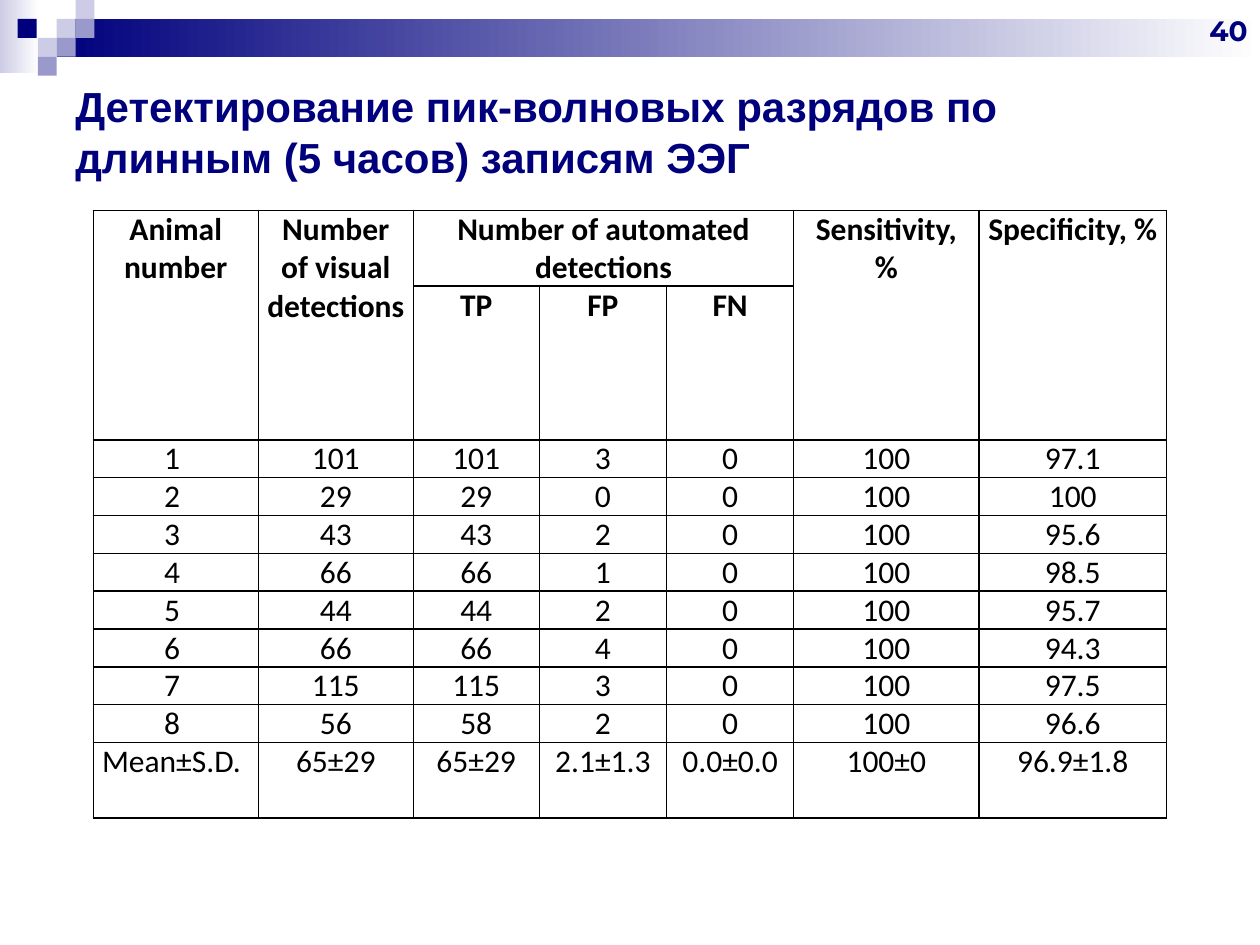
import pptx
import pptx.util
import pptx.dml.color
import pptx.enum.shapes
import pptx.enum.text
import pptx.oxml
import pptx.oxml.ns
from pptx.util import Inches

NAVY = pptx.dml.color.RGBColor(0x00, 0x00, 0x7D)
LAVENDER = pptx.dml.color.RGBColor(0xCC, 0xCC, 0xE6)
VIOLET = pptx.dml.color.RGBColor(0x99, 0x99, 0xCC)
WHITE = pptx.dml.color.RGBColor(0xFF, 0xFF, 0xFF)
BLACK = pptx.dml.color.RGBColor(0x00, 0x00, 0x00)
ALIGN = pptx.enum.text.PP_ALIGN
ANCHOR = pptx.enum.text.MSO_ANCHOR


def write_text(frame, text, size=18, font="Calibri", color=BLACK, bold=False, align=ALIGN.LEFT):
    frame.word_wrap = True
    paragraph = frame.paragraphs[0]
    paragraph.alignment = align
    run = paragraph.add_run()
    run.text = text
    run.font.size = pptx.util.Pt(size)
    run.font.name = font
    run.font.bold = bold
    run.font.color.rgb = color


def add_block(left, top, width, height, color, fade=False):
    shape = slide.shapes.add_shape(
        pptx.enum.shapes.MSO_SHAPE.RECTANGLE,
        Inches(left), Inches(top), Inches(width), Inches(height))
    shape.shadow.inherit = False
    shape.line.fill.background()
    if fade:
        shape.fill.gradient()
        shape.fill.gradient_angle = 0
        for stop, stop_color in zip(shape.fill.gradient_stops, (color, WHITE)):
            stop.color.rgb = stop_color
    else:
        shape.fill.solid()
        shape.fill.fore_color.rgb = color


presentation = pptx.Presentation()
presentation.slide_width = Inches(10)
presentation.slide_height = Inches(7.5)
slide = presentation.slides.add_slide(presentation.slide_layouts[6])

# Header band and mosaic of small squares
add_block(0, 0, 0.31, 0.58, LAVENDER, fade=True)
add_block(0.45, 0.15, 9.55, 0.3, NAVY, fade=True)
SQUARE = 0.15
for left, top, color in [
    (0.45, 0.15, LAVENDER), (0.6, 0, LAVENDER), (0.6, 0.15, VIOLET), (0.3, 0.3, LAVENDER),
    (0.14, 0.15, NAVY), (0.45, 0.3, VIOLET), (0.3, 0.45, VIOLET),
]:
    add_block(left, top, SQUARE, SQUARE, color)

# Title
title = slide.shapes.add_textbox(Inches(0.5), Inches(0.5), Inches(9), Inches(1.08))
title.text_frame.vertical_anchor = ANCHOR.MIDDLE
write_text(title.text_frame, "Детектирование пик-волновых разрядов по длинным (5 часов) записям ЭЭГ",
           size=24, font="Arial", color=NAVY, bold=True)

# Slide number
number = slide.shapes.add_textbox(Inches(8.5), Inches(0), Inches(1.5), Inches(0.42))
number.text_frame.vertical_anchor = ANCHOR.BOTTOM
write_text(number.text_frame, "40", size=16, font="Montserrat", color=NAVY, bold=True,
           align=ALIGN.RIGHT)

# Detection results: two header rows, eight animals, summary
HEADER_ROWS = 2
rows = [
    ["Animal number", "Number of visual detections", "Number of automated detections",
     "", "", "Sensitivity, %", "Specificity, %"],
    ["", "", "TP", "FP", "FN", "", ""],
    ["1 ", "101", "101", "3", "0", "100", "97.1"],
    ["2 ", "29", "29", "0", "0", "100", "100"],
    ["3 ", "43", "43", "2", "0", "100", "95.6"],
    ["4 ", "66", "66", "1", "0", "100", "98.5"],
    ["5 ", "44", "44", "2", "0", "100", "95.7"],
    ["6 ", "66", "66", "4", "0", "100", "94.3"],
    ["7 ", "115", "115", "3", "0", "100", "97.5"],
    ["8 ", "56", "58", "2", "0", "100", "96.6"],
    ["Mean±S.D.", "65±29", "65±29", "2.1±1.3", "0.0±0.0", "100±0", "96.9±1.8"],
]
column_widths = [1.31, 1.23, 1, 1.01, 1.01, 1.47, 1.49]
row_heights = [0.6, 1.22] + [0.3] * 8 + [0.6]

table = slide.shapes.add_table(
    len(rows), len(column_widths), Inches(0.74), Inches(1.67),
    Inches(sum(column_widths)), Inches(sum(row_heights))).table
table.first_row = False
table.horz_banding = False
for column, width in zip(table.columns, column_widths):
    column.width = Inches(width)
for row, height in zip(table.rows, row_heights):
    row.height = Inches(height)

for row_index, values in enumerate(rows):
    for column_index, value in enumerate(values):
        cell = table.cell(row_index, column_index)
        cell.margin_left = cell.margin_right = Inches(0.07)
        cell.margin_top = cell.margin_bottom = 0
        properties = cell._tc.get_or_add_tcPr()
        for side in ("lnL", "lnR", "lnT", "lnB"):
            properties.append(pptx.oxml.parse_xml(
                f'<a:{side} {pptx.oxml.ns.nsdecls("a")} w="12700"><a:solidFill>'
                f'<a:srgbClr val="{BLACK}"/></a:solidFill></a:{side}>'))
        cell.fill.background()
        if value:
            write_text(cell.text_frame, value, bold=row_index < HEADER_ROWS,
                       align=ALIGN.JUSTIFY if value == "Mean±S.D." else ALIGN.CENTER)

# Merged headings
for column_index in (0, 1, 5, 6):
    table.cell(0, column_index).merge(table.cell(1, column_index))
table.cell(0, 2).merge(table.cell(0, 4))

presentation.save("out.pptx")
